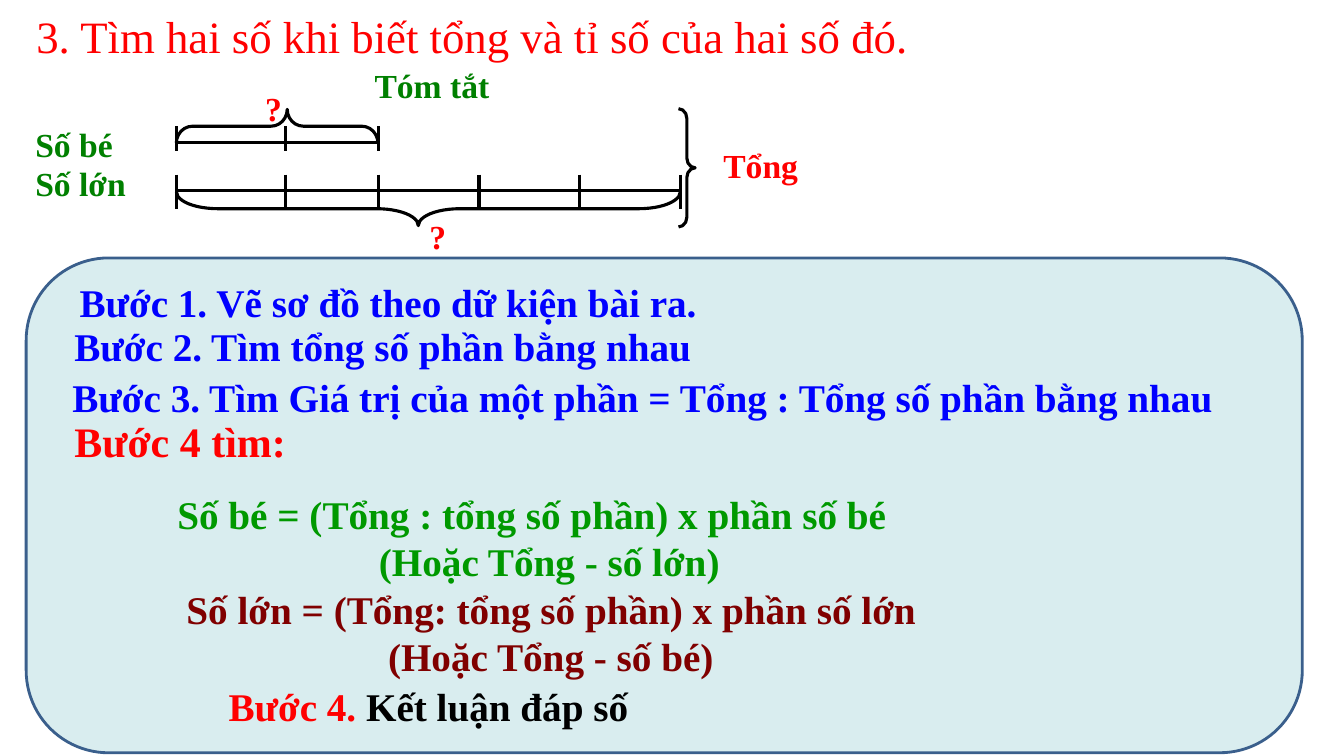
"""Build a slide on finding two numbers from their sum and ratio."""
from dataclasses import dataclass

from lxml import etree
from pptx import Presentation
from pptx.dml.color import RGBColor
from pptx.enum.shapes import MSO_CONNECTOR, MSO_SHAPE
from pptx.enum.text import MSO_ANCHOR, MSO_AUTO_SIZE, PP_ALIGN
from pptx.oxml.ns import qn
from pptx.util import Cm, Pt

LINE = MSO_CONNECTOR.STRAIGHT
BRACE, ROUND = MSO_SHAPE.RIGHT_BRACE, MSO_SHAPE.ROUNDED_RECTANGLE
TOP, LEFT, FIXED = MSO_ANCHOR.TOP, PP_ALIGN.LEFT, MSO_AUTO_SIZE.NONE


@dataclass(frozen=True)
class Theme:
    """Hold the colours, font and sizes of the slide."""
    font: str = "Times New Roman"
    red: str = "FF0000"
    green: str = "008000"
    leaf: str = "009900"
    maroon: str = "800000"
    blue: str = "0000FF"
    black: str = "000000"
    fill: str = "D9EDEF"
    edge: str = "3A5F8C"
    title: int = 32
    lead: int = 30
    text: int = 28
    label: int = 24
    stroke: float = 2.25
    border: float = 2


class Board:
    """Draw styled elements on one slide."""

    def __init__(self, slide, theme):
        """Keep the slide and its theme."""
        self.slide, self.theme = slide, theme

    def place(self, shape, box):
        """Move a shape to a box given in centimetres."""
        shape.left, shape.top, shape.width, shape.height = map(Cm, box)

    def style(self, item, size, color, bold=True):
        """Format the runs of a paragraph."""
        for run in item.runs:
            font = run.font
            font.name, font.size, font.bold = self.theme.font, Pt(size), bold
            font.color.rgb = RGBColor.from_string(color)

    def frame(self, shape):
        """Return a wrapping, top-anchored text frame."""
        frame = shape.text_frame
        frame.word_wrap, frame.auto_size = True, FIXED
        frame.vertical_anchor = TOP
        return frame

    def indent(self, item, size):
        """Set the left margin of a paragraph without a bullet."""
        props = item._p.get_or_add_pPr()
        props.set("marL", str(Cm(size)))
        props.set("indent", "0")
        etree.SubElement(props, qn("a:buNone"))

    def title(self, text, box):
        """Fill the title placeholder."""
        shape = self.slide.shapes.title
        self.place(shape, box)
        frame = self.frame(shape)
        frame.text = text
        item = frame.paragraphs[0]
        item.alignment = LEFT
        self.style(item, self.theme.title, self.theme.red, False)

    def steps(self, rows, box):
        """Fill the body placeholder with the steps."""
        shape = self.slide.placeholders[1]
        self.place(shape, box)
        frame = self.frame(shape)
        frame.text = "\n".join(row[0] for row in rows)
        for item, (_, size, color, gap, pitch) in zip(frame.paragraphs, rows):
            item.alignment, item.space_before = LEFT, Pt(0)
            item.line_spacing = Pt(pitch)
            self.indent(item, gap)
            self.style(item, size, color)

    def text(self, text, box, size, color):
        """Add a text box and return its frame."""
        shape = self.slide.shapes.add_textbox(*map(Cm, box))
        frame = self.frame(shape)
        frame.text = text
        for item in frame.paragraphs:
            self.style(item, size, color)
        return frame

    def rule(self, rows, box, color):
        """Add a formula with an indented second line."""
        frame = self.text("\n".join(rows), box, self.theme.text, color)
        self.indent(frame.paragraphs[1], 5.08)

    def line(self, x1, y1, x2, y2):
        """Add a plain black line."""
        link = self.slide.shapes.add_connector(LINE, *map(Cm, (x1, y1, x2, y2)))
        link.line.width = Pt(self.theme.stroke)
        link.line.color.rgb = RGBColor.from_string(self.theme.black)
        etree.SubElement(link._element.spPr, qn("a:effectLst"))

    def bar(self, marks, y, top, base):
        """Add a segment bar with a tick at each mark."""
        self.line(marks[0], y, marks[-1], y)
        for x in marks:
            self.line(x, top, x, base)

    def brace(self, box, bend, tip, turn=0):
        """Add a curly brace."""
        shape = self.slide.shapes.add_shape(BRACE, *map(Cm, box))
        shape.adjustments[0], shape.adjustments[1] = bend, tip
        shape.rotation, shape.shadow.inherit = turn, False
        shape.fill.background()
        shape.line.width = Pt(self.theme.stroke)
        shape.line.color.rgb = RGBColor.from_string(self.theme.black)

    def panel(self, box):
        """Add the rounded panel behind all other elements."""
        tree = self.slide.shapes
        shape = tree.add_shape(ROUND, *map(Cm, box))
        shape.shadow.inherit = False
        shape.fill.solid()
        shape.fill.fore_color.rgb = RGBColor.from_string(self.theme.fill)
        shape.line.color.rgb = RGBColor.from_string(self.theme.edge)
        shape.line.width = Pt(self.theme.border)
        tree._spTree.insert(2, shape._element)


def main():
    """Build and save the slide."""
    deck = Presentation()
    deck.slide_width, deck.slide_height = Cm(33.87), Cm(19.05)
    theme = Theme()
    board = Board(deck.slides.add_slide(deck.slide_layouts[1]), theme)

    board.panel((0.66, 6.5, 32.16, 12.47))
    board.title("3. Tìm hai số khi biết tổng và tỉ số của hai số đó.",
                (0.66, 0.08, 23.7, 1.63))

    start, part = 4.45, 2.54
    marks = [start, 7.2] + [start + part * n for n in range(2, 6)]
    board.bar(marks[:3], 3.6, 3.18, 3.81)
    board.bar(marks, 4.8, 4.4, 5.26)
    board.brace((17.1, 2.74, 0.42, 2.98), 0.58, 0.5)
    board.brace((6.56, 0.64, 0.85, 2 * part), 0.48, 0.55, 270)
    board.brace((10.37, -1.09, 0.85, 5 * part), 1.23, 0.52, 90)

    for word, x, y, color in (
            ("Tóm tắt", 9.19, 1.52, theme.green),
            ("Số bé", 0.64, 3, theme.green),
            ("Số lớn", 0.64, 3.99, theme.green),
            ("Tổng", 17.98, 3.53, theme.red),
            ("?", 6.43, 2.08, theme.red),
            ("?", 10.57, 5.31, theme.red)):
        board.text(word, (x, y, 3.6, 1.3), theme.label, color)

    board.steps((
        ("Bước 1. Vẽ sơ đồ theo dữ kiện bài ra.",
         theme.text, theme.blue, 0.18, 33.5),
        ("Bước 2. Tìm tổng số phần bằng nhau",
         theme.text, theme.blue, 0.05, 31.5),
        ("Bước 3. Tìm Giá trị của một phần = Tổng : Tổng số phần bằng nhau",
         theme.text, theme.blue, 0, 36.5),
        ("Bước 4 tìm:", theme.lead, theme.red, 0.05, 32.5),
    ), (1.57, 6.88, 30.5, 5))

    board.rule(("Số bé = (Tổng : tổng số phần) x phần số bé",
                "(Hoặc Tổng - số lớn)"), (4.22, 12.22, 22.6, 2.64), theme.leaf)
    board.rule(("Số lớn = (Tổng: tổng số phần) x phần số lớn",
                "(Hoặc Tổng - số bé)"), (4.45, 14.63, 24.1, 2.64), theme.maroon)

    last = board.text("Bước 4. ", (5.51, 17.07, 14.5, 1.45),
                      theme.text, theme.red).paragraphs[0]
    run = last.add_run()
    run.text = "Kết luận đáp số"
    board.style(last, theme.text, theme.black)
    last.runs[0].font.color.rgb = RGBColor.from_string(theme.red)

    deck.save("out.pptx")


if __name__ == "__main__":
    main()
